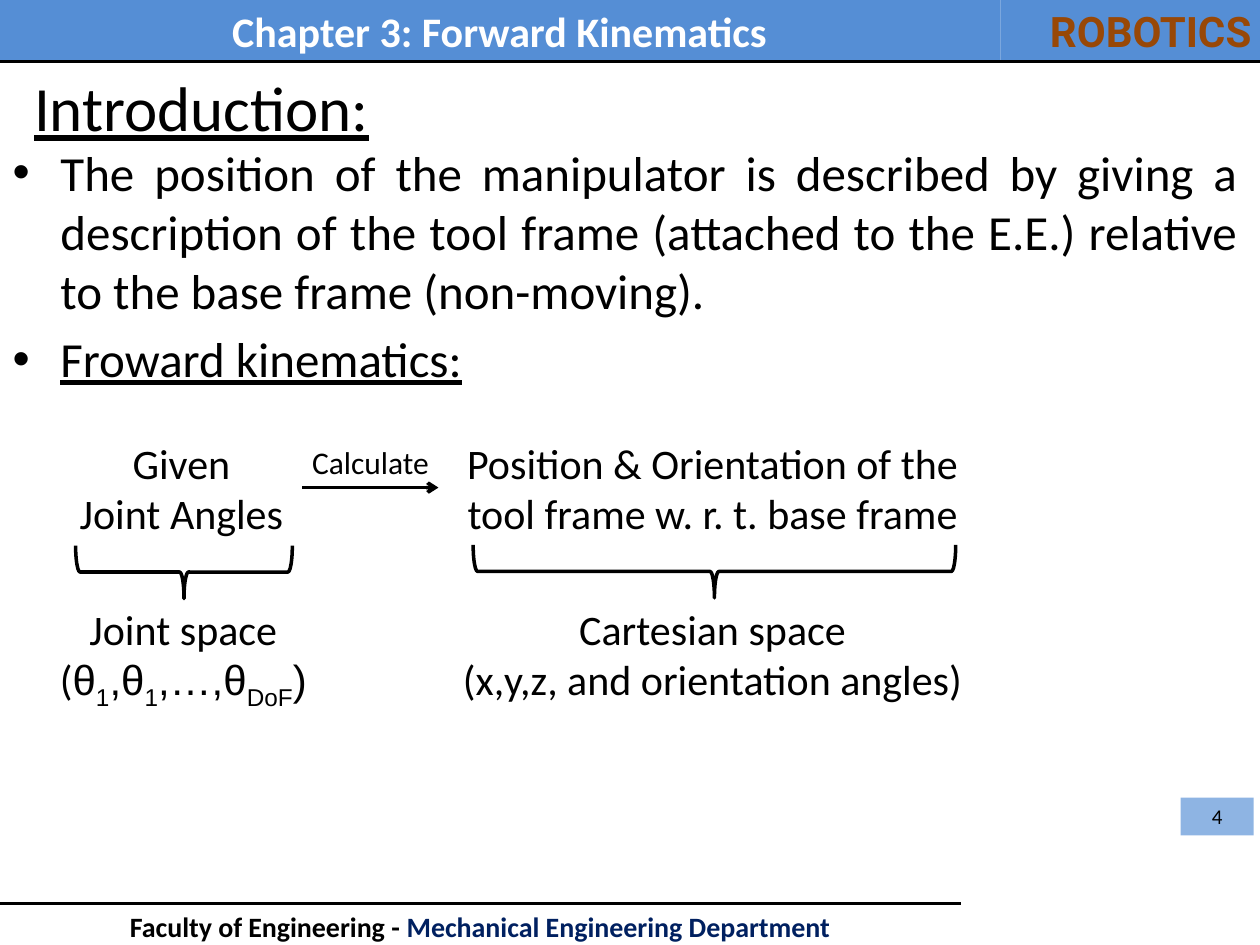
from lxml import etree
from pptx import Presentation
from pptx.dml.color import RGBColor
from pptx.enum.shapes import MSO_CONNECTOR, MSO_SHAPE
from pptx.enum.text import MSO_ANCHOR, PP_ALIGN
from pptx.oxml.ns import qn
from pptx.util import Inches, Pt

LEFT, CENTER, RIGHT, JUSTIFY = PP_ALIGN.LEFT, PP_ALIGN.CENTER, PP_ALIGN.RIGHT, PP_ALIGN.JUSTIFY
MIDDLE, TOP = MSO_ANCHOR.MIDDLE, MSO_ANCHOR.TOP
RECTANGLE, BRACE = MSO_SHAPE.RECTANGLE, MSO_SHAPE.RIGHT_BRACE
STRAIGHT = MSO_CONNECTOR.STRAIGHT
COLORS = {
    "black": "000000", "white": "FFFFFF", "navy": "002060",
    "brown": "984807", "bar": "558ED5", "badge": "8EB4E3",
}


def write(paragraph, text, size, color="black", font="Calibri", bold=False, underline=False):
    span = paragraph.add_run()
    span.text = text
    span.font.size = Pt(size)
    span.font.name = font
    span.font.bold = bold
    span.font.underline = underline
    span.font.color.rgb = RGBColor.from_string(COLORS[color])
    return span


def add_line(x1, x2, y):
    line = page.shapes.add_connector(STRAIGHT, Inches(x1), Inches(y), Inches(x2), Inches(y))
    line.line.color.rgb = RGBColor.from_string(COLORS["black"])
    line.line.width = Pt(2)
    etree.SubElement(line.line._get_or_add_ln().getparent(), qn("a:effectLst"))
    return line


deck = Presentation()
deck.slide_width, deck.slide_height = Inches(10), Inches(7.5)
page = deck.slides.add_slide(deck.slide_layouts[1])

# Header bars and page number badge
blocks = [
    (-0.01, -0.01, 7.95, 0.5, "bar", "Chapter 3: Forward Kinematics", 24, "white", "Calibri", True, CENTER),
    (7.94, -0.01, 2.09, 0.5, "bar", "ROBOTICS", 24, "brown", "Roboto", True, RIGHT),
    (9.37, 6.33, 0.58, 0.3, "badge", "4", 12, "black", "Calibri", False, CENTER),
]
for left, top, width, height, fill, text, size, color, font, bold, align in blocks:
    block = page.shapes.add_shape(RECTANGLE, Inches(left), Inches(top), Inches(width), Inches(height))
    block.shadow.inherit = False
    block.fill.solid()
    block.fill.fore_color.rgb = RGBColor.from_string(COLORS[fill])
    block.line.fill.background()
    block.text_frame.vertical_anchor = MIDDLE
    para = block.text_frame.paragraphs[0]
    para.alignment = align
    write(para, text, size, color, font, bold)

# Header and footer rules
add_line(0, 10.03, 0.49)
add_line(0, 7.63, 7.17)

# Footer
footer = page.shapes.add_textbox(Inches(-0.01), Inches(7.17), Inches(7.64), Inches(0.37))
footer.text_frame.word_wrap = True
para = footer.text_frame.paragraphs[0]
para.alignment = CENTER
write(para, "Faculty of Engineering - ", 16, bold=True)
write(para, "Mechanical Engineering Department", 16, "navy", bold=True)

# Title
title = page.shapes.title
title.left, title.top, title.width, title.height = Inches(0.17), Inches(0.49), Inches(9.83), Inches(0.71)
title.text_frame.vertical_anchor = MIDDLE
para = title.text_frame.paragraphs[0]
para.alignment = LEFT
write(para, "Introduction:", 36, underline=True)

# Bullet list
body = page.placeholders[1]
body.left, body.top, body.width, body.height = Inches(0), Inches(1.08), Inches(9.92), Inches(6.08)
body.text_frame.vertical_anchor = TOP
bullets = [
    ("The position of the manipulator is described by giving a description of the tool frame "
     "(attached to the E.E.) relative to the base frame (non-moving).", False),
    ("Froward kinematics:", True),
]
for index, (text, underline) in enumerate(bullets):
    para = body.text_frame.paragraphs[0] if index == 0 else body.text_frame.add_paragraph()
    properties = para._p.get_or_add_pPr()
    properties.set("marL", str(Inches(0.38)))
    properties.set("indent", str(-Inches(0.38)))
    etree.SubElement(properties, qn("a:buFont"), typeface="Arial")
    etree.SubElement(properties, qn("a:buChar"), char="•")
    para.alignment = JUSTIFY
    para.space_before = Pt(5.6 if index else 0)
    write(para, text, 28, underline=underline)

# Diagram labels: each line is a list of (text, font, is subscript)
joint_angles = [("(", "Calibri", False)]
for symbol, subscript in [("θ", "1"), (",θ", "1"), (",…,θ", "DoF")]:
    joint_angles += [(symbol, "Arial", False), (subscript, "Arial", True)]
joint_angles.append((")", "Arial", False))
labels = [
    (0.48, 3.42, 1.92, 0.91, 24, ["Given", "Joint Angles"]),
    (0.08, 4.74, 2.75, 0.91, 24, ["Joint space", joint_angles]),
    (1.98, 3.47, 1.92, 0.4, 18, ["Calculate"]),
    (3.48, 3.42, 4.35, 0.91, 24, ["Position & Orientation of the tool frame w. r. t. base frame"]),
    (3.48, 4.74, 4.35, 0.91, 24, ["Cartesian space", "(x,y,z, and orientation angles)"]),
]
for left, top, width, height, size, lines in labels:
    box = page.shapes.add_textbox(Inches(left), Inches(top), Inches(width), Inches(height))
    box.text_frame.word_wrap = True
    for index, content in enumerate(lines):
        para = box.text_frame.paragraphs[0] if index == 0 else box.text_frame.add_paragraph()
        para.alignment = CENTER
        parts = [(content, "Calibri", False)] if isinstance(content, str) else content
        for text, font, is_subscript in parts:
            span = write(para, text, size, font=font)
            if is_subscript:
                span.font._element.set("baseline", "-25000")

# Braces, turned to point down
for left, top, height in [(1.25, 3.68, 1.72), (5.46, 2.62, 3.83)]:
    brace = page.shapes.add_shape(BRACE, Inches(left), Inches(top), Inches(0.42), Inches(height))
    brace.rotation = 90
    brace.shadow.inherit = False
    brace.fill.background()
    brace.line.color.rgb = RGBColor.from_string(COLORS["black"])
    brace.line.width = Pt(2)

# Calculation arrow
arrow = add_line(2.4, 3.48, 3.87)
etree.SubElement(arrow.line._get_or_add_ln(), qn("a:tailEnd"), type="arrow")

deck.save("out.pptx")
